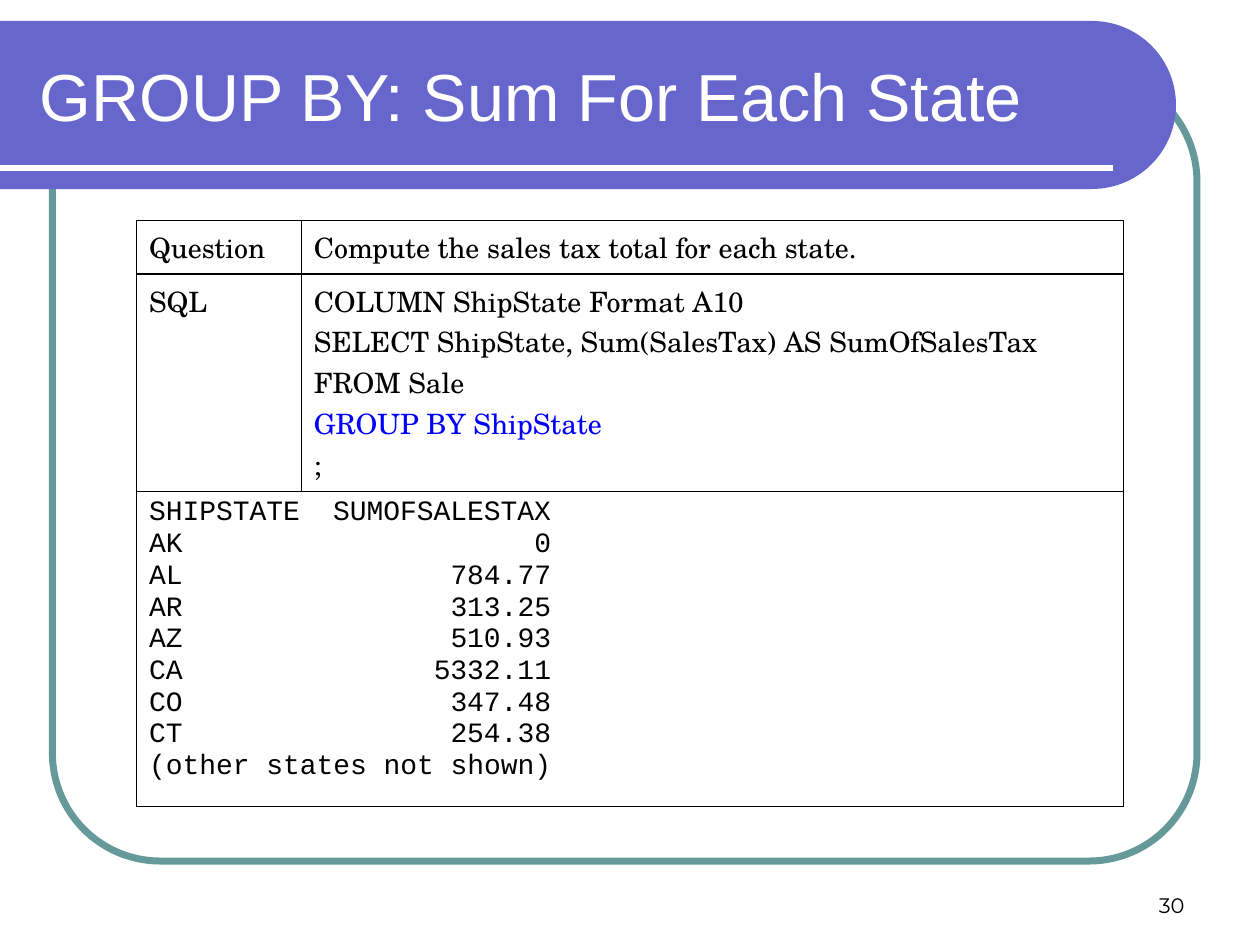
"""Build the GROUP BY slide: banner, frame, query table and page number."""
import math

import lxml.etree
import pptx
import pptx.dml.color
import pptx.enum.shapes
import pptx.enum.text
import pptx.oxml
import pptx.oxml.ns
import pptx.util

COLUMNS = 120
presentation = pptx.Presentation()
presentation.slide_width = pptx.util.Inches(10)
presentation.slide_height = pptx.util.Inches(7.5)
CELL = presentation.slide_width // COLUMNS
qn = pptx.oxml.ns.qn
ANCHOR = pptx.enum.text.MSO_ANCHOR
ALIGN = pptx.enum.text.PP_ALIGN
color = pptx.dml.color.RGBColor.from_string


def grid(*counts):
    """Turn counts of grid cells into lengths."""
    return [pptx.util.Emu(round(count * CELL)) for count in counts]


def write(paragraph, text, font, size, ink, **formats):
    """Fill a paragraph and set its format."""
    run = paragraph.add_run()
    run.text = text
    run.font.color.rgb = color(ink)
    for name, value in {"name": font, "size": pptx.util.Pt(size)}.items():
        setattr(run.font, name, value)
    for name, value in formats.items():
        setattr(paragraph, name, value)


slide = presentation.slides.add_slide(presentation.slide_layouts[6])
shapes = slide.shapes

frame = shapes.add_shape(pptx.enum.shapes.MSO_SHAPE.ROUNDED_RECTANGLE, *grid(5, 7, 109, 75))
frame.adjustments[0] = 0.137
frame.shadow.inherit = False
frame.fill.background()
frame.line.color.rgb = color("669999")
frame.line.width = pptx.util.Pt(4)

radius, center_x, center_y = 8, 104, 10
arc = [
    (center_x + radius * math.cos(math.radians(angle)),
     center_y + radius * math.sin(math.radians(angle)))
    for angle in range(-90, 91, 3)
]
builder = shapes.build_freeform(0, 2 * CELL)
builder.add_line_segments([grid(*point) for point in arc + [(0, center_y + radius)]], close=True)
banner = builder.convert_to_shape()
banner.shadow.inherit = False
banner.fill.solid()
banner.fill.fore_color.rgb = color("6666CC")
banner.line.fill.background()

rule = shapes.add_connector(pptx.enum.shapes.MSO_CONNECTOR.STRAIGHT, *grid(0, 16, 106, 16))
rule.line.color.rgb = color("FFFFFF")
rule.line.width = pptx.util.Pt(3)
lxml.etree.SubElement(rule._element.spPr, qn("a:effectLst"))

for place, anchor, align, label in [
    ((86, 82, 28, 6), ANCHOR.BOTTOM, ALIGN.RIGHT, ("30", "Montserrat", 12, "000000")),
    ((2.6, 3, 105.2, 12), ANCHOR.MIDDLE, ALIGN.LEFT,
     ("GROUP BY: Sum For Each State", "Arial", 38, "FFFFFF")),
]:
    text_frame = shapes.add_textbox(*grid(*place)).text_frame
    for name, value in {"word_wrap": True, "vertical_anchor": anchor}.items():
        setattr(text_frame, name, value)
    write(text_frame.paragraphs[0], *label, alignment=align)

column_widths, row_heights = (15.7, 78.3), (5.1, 20.7, 28.4)
table = shapes.add_table(
    3, 2, *grid(13, 21, sum(column_widths), sum(row_heights))
).table
for name in ("first_row", "horz_banding"):
    setattr(table, name, False)
for column, width in zip(table.columns, grid(*column_widths)):
    column.width = width
for row, height in zip(table.rows, grid(*row_heights)):
    row.height = height
table.cell(2, 0).merge(table.cell(2, 1))

for cell in table.iter_cells():
    properties = cell._tc.get_or_add_tcPr()
    for side in ("lnL", "lnR", "lnT", "lnB"):
        border = lxml.etree.SubElement(properties, qn("a:" + side), w=str(pptx.util.Pt(1)))
        fill = lxml.etree.SubElement(border, qn("a:solidFill"))
        lxml.etree.SubElement(fill, qn("a:srgbClr"), val="000000")
    cell.fill.background()

query = [
    "COLUMN ShipState Format A10",
    "SELECT ShipState, Sum(SalesTax) AS SumOfSalesTax",
    "FROM Sale",
    "GROUP BY ShipState",
    ";",
]
questions = [
    ["Question", ["Compute the sales tax total for each state."]],
    ["SQL", query],
]
for row_index, (heading, lines) in enumerate(questions):
    for column_index, texts in enumerate([[heading], lines]):
        text_frame = table.cell(row_index, column_index).text_frame
        for index, text in enumerate(texts):
            paragraph = text_frame.add_paragraph() if index else text_frame.paragraphs[0]
            ink = "0000FF" if text.startswith("GROUP BY") else "000000"
            write(paragraph, text, "TeX Gyre Schola", 16, ink)

results = [
    ("SHIPSTATE", "SUMOFSALESTAX"),
    ("AK", "0"),
    ("AL", "784.77"),
    ("AR", "313.25"),
    ("AZ", "510.93"),
    ("CA", "5332.11"),
    ("CO", "347.48"),
    ("CT", "254.38"),
    ("(other states not shown)",),
]
result_frame = table.cell(2, 0).text_frame
for index, values in enumerate(results):
    paragraph = result_frame.add_paragraph() if index else result_frame.paragraphs[0]
    if len(values) > 1:
        tabs = lxml.etree.SubElement(paragraph._p.get_or_add_pPr(), qn("a:tabLst"))
        lxml.etree.SubElement(tabs, qn("a:tab"), pos=str(pptx.util.Inches(3.19)), algn="r")
    write(paragraph, "\t".join(values), "Courier New", 16, "000000")

presentation.save("out.pptx")
